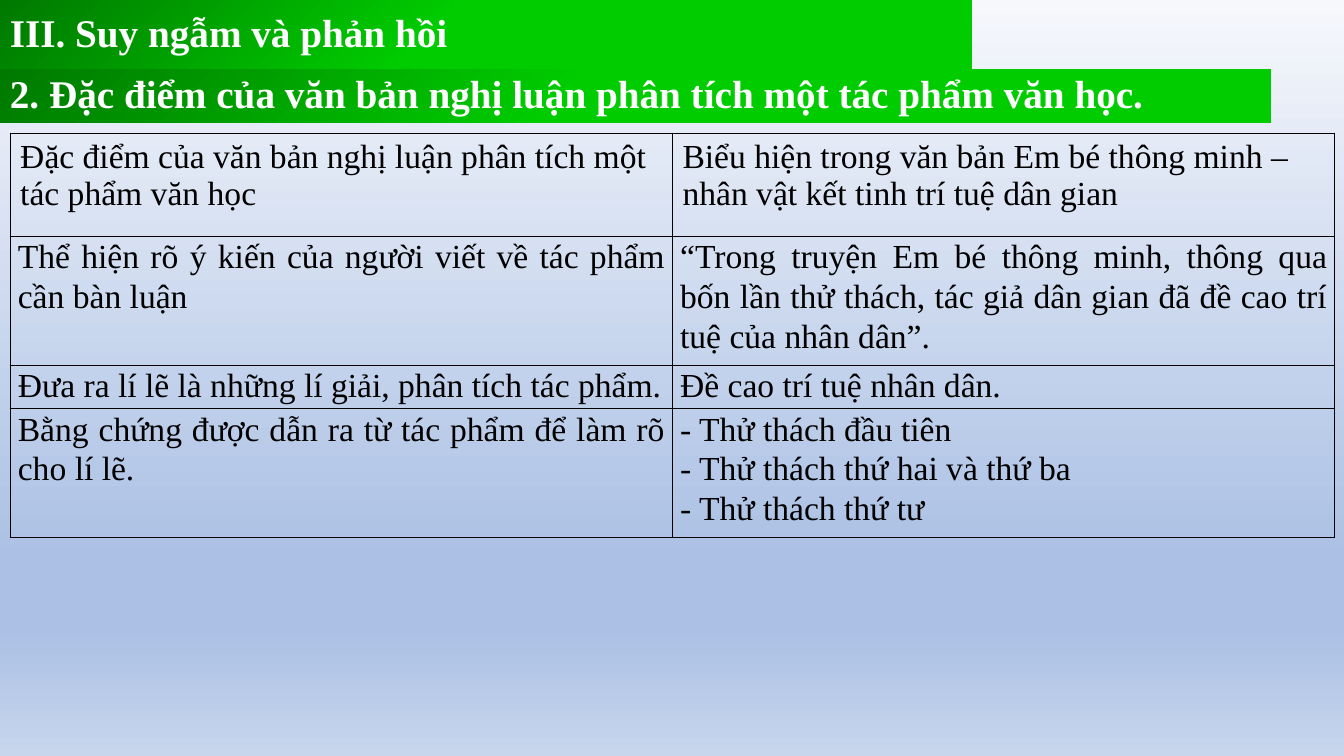
"""Build a slide with two heading bars and a table on literary analysis texts."""
from lxml import etree
from pptx import Presentation
from pptx.dml.color import RGBColor
from pptx.enum.shapes import MSO_SHAPE
from pptx.enum.text import MSO_ANCHOR, PP_ALIGN
from pptx.oxml import parse_xml
from pptx.oxml.ns import qn
from pptx.util import Cm, Pt

RECT = MSO_SHAPE.RECTANGLE
MIDDLE, TOP = MSO_ANCHOR.MIDDLE, MSO_ANCHOR.TOP
LEFT, JUSTIFY = PP_ALIGN.LEFT, PP_ALIGN.JUSTIFY
NS = "http://schemas.openxmlformats.org/drawingml/2006/main"

SKY = [(0, "F6F8FC"), (74, "ABC0E4"), (83, "ABC0E4"), (100, "C7D5ED")]
GREEN = [(0, "007900"), (45, "00CC00"), (100, "00CC00")]

BARS = [
    ("III. Suy ngẫm và phản hồi", 0, 24.49, 1.75),
    ("2. Đặc điểm của văn bản nghị luận phân tích một tác phẩm văn học.", 1.75, 32.03, 1.35),
]
ROWS = [
    (2.59, ["Đặc điểm của văn bản nghị luận phân tích một tác phẩm văn học"],
     ["Biểu hiện trong văn bản Em bé thông minh – nhân vật kết tinh trí tuệ dân gian"]),
    (3.25, ["Thể hiện rõ ý kiến của người viết về tác phẩm cần bàn luận"],
     ["“Trong truyện Em bé thông minh, thông qua bốn lần thử thách, "
      "tác giả dân gian đã đề cao trí tuệ của nhân dân”."]),
    (1.1, ["Đưa ra lí lẽ là những lí giải, phân tích tác phẩm."],
     ["Đề cao trí tuệ nhân dân."]),
    (3.25, ["Bằng chứng được dẫn ra từ tác phẩm để làm rõ cho lí lẽ."],
     ["- Thử thách đầu tiên", "- Thử thách thứ hai và thứ ba", "- Thử thách thứ tư"]),
]
TABLE_LEFT, TABLE_TOP, COL_WIDTH = 0.26, 3.36, 16.69

BAR_FONT = {"name": "Times New Roman", "size": Pt(28), "bold": True}
CELL_FONT = {"name": "Times New Roman", "size": Pt(24), "bold": False}
HEAD_CELL = {"margin_left": Cm(0.25), "margin_right": Cm(0.25),
             "margin_top": Cm(0.13), "margin_bottom": Cm(0.13)}
BODY_CELL = {"margin_left": Cm(0.19), "margin_right": Cm(0.19),
             "margin_top": 0, "margin_bottom": 0}


def rgb(code):
    return RGBColor.from_string(code)


def apply(obj, values):
    for name, value in values.items():
        setattr(obj, name, value)


def set_gradient(fill, owner, stops, angle):
    fill.gradient()
    grad = owner.find(".//" + qn("a:gradFill"))
    gs_list = grad.find(qn("a:gsLst"))
    for gs in list(gs_list):
        gs_list.remove(gs)
    for pos, code in stops:
        gs = etree.SubElement(gs_list, qn("a:gs"), pos=str(pos * 1000))
        etree.SubElement(gs, qn("a:srgbClr"), val=code)
    grad.find(qn("a:lin")).set("ang", str(angle * 60000))


def write(tf, lines, font, color, **para):
    for i, line in enumerate(lines):
        p = tf.paragraphs[0] if i == 0 else tf.add_paragraph()
        apply(p, para)
        r = p.add_run()
        r.text = line
        apply(r.font, font)
        r.font.color.rgb = rgb(color)


def add_bar(s, text, top, width, height):
    sp = s.shapes.add_shape(RECT, 0, Cm(top), Cm(width), Cm(height))
    sp.shadow.inherit = False
    sp.line.fill.background()
    set_gradient(sp.fill, sp._element, GREEN, 45)
    tf = sp.text_frame
    apply(tf, {"word_wrap": True, "vertical_anchor": MIDDLE, "margin_left": Cm(0.25),
               "margin_right": Cm(0.25), "margin_top": 0, "margin_bottom": 0})
    write(tf, [text], BAR_FONT, "FFFFFF", alignment=LEFT, line_spacing=0.9)


def add_borders(cell):
    tc_pr = cell._tc.get_or_add_tcPr()
    for i, side in enumerate(("lnL", "lnR", "lnT", "lnB")):
        tc_pr.insert(i, parse_xml(
            f'<a:{side} xmlns:a="{NS}" w="12700"><a:solidFill>'
            f'<a:srgbClr val="000000"/></a:solidFill></a:{side}>'))


def add_grid(s):
    total = sum(row[0] for row in ROWS)
    table = s.shapes.add_table(len(ROWS), 2, Cm(TABLE_LEFT), Cm(TABLE_TOP),
                               Cm(2 * COL_WIDTH), Cm(total)).table
    apply(table, {"first_row": False, "horz_banding": False})
    for i, (height, *texts) in enumerate(ROWS):
        table.rows[i].height = Cm(height)
        for j, lines in enumerate(texts):
            cell = table.cell(i, j)
            apply(cell, BODY_CELL if i else HEAD_CELL)
            cell.vertical_anchor = TOP
            cell.fill.background()
            add_borders(cell)
            para = {"alignment": JUSTIFY, "line_spacing": 1.07} if i else {"alignment": LEFT}
            write(cell.text_frame, lines, CELL_FONT, "000000", **para)


def main():
    prs = Presentation()
    prs.slide_width, prs.slide_height = Cm(33.87), Cm(19.05)
    s = prs.slides.add_slide(prs.slide_layouts[6])
    set_gradient(s.background.fill, s._element, SKY, 90)
    for bar in BARS:
        add_bar(s, *bar)
    add_grid(s)
    prs.save("out.pptx")


if __name__ == "__main__":
    main()
